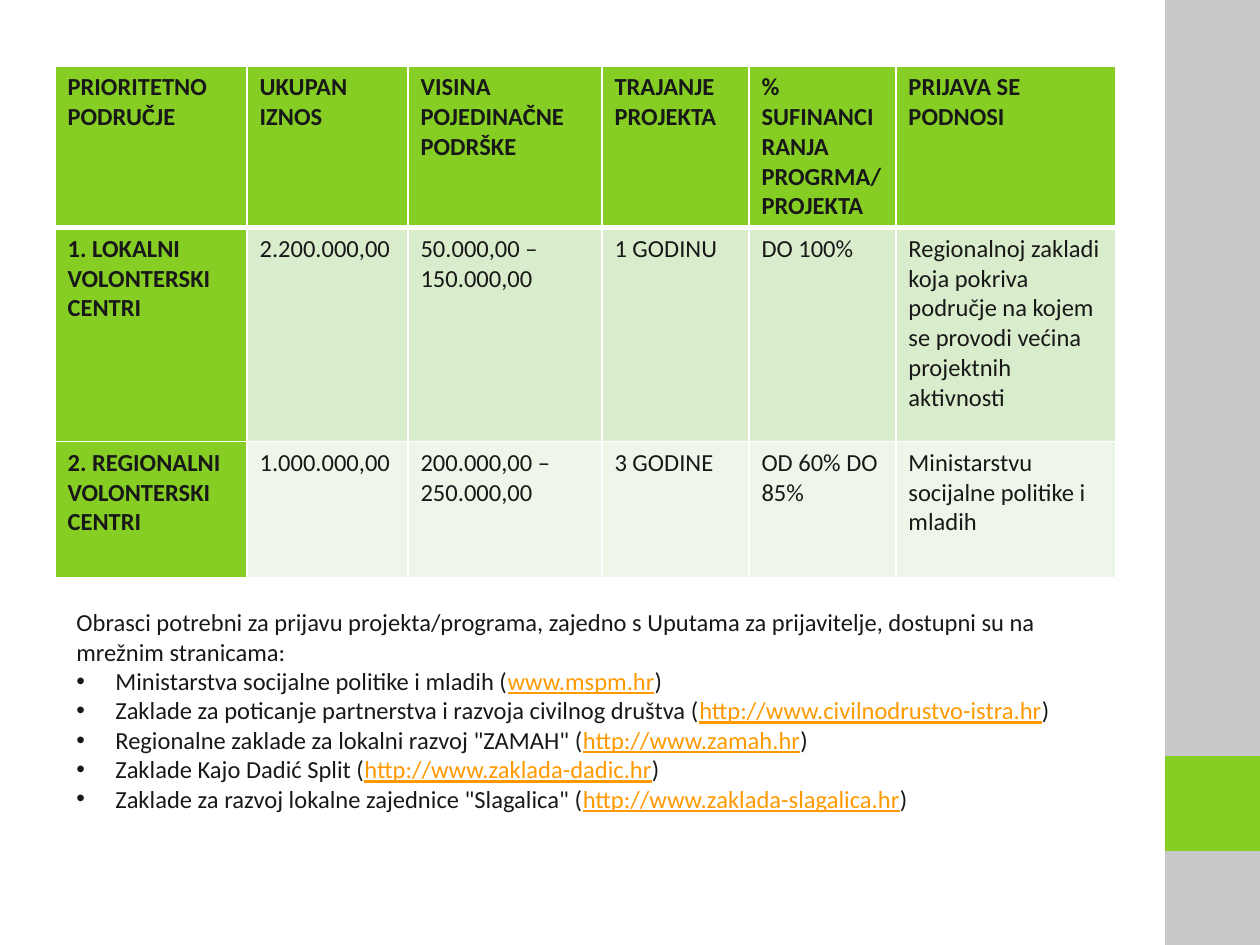
from lxml import etree
from pptx import Presentation, util as u
from pptx.dml.color import RGBColor
from pptx.enum import shapes
from pptx.oxml import ns

GREEN, GREY, WHITE, INK, LINK = "86CE24", "C9C9C9", "FFFFFF", "181818", "FF9900"
BANDS = ["D9EDCD", "EDF6E8"]
COLS = [192, 161, 194, 147, 147, 220]
ROWS = [160, 214, 136]
CELLS = [
    ["PRIORITETNO PODRUČJE", "UKUPAN\nIZNOS", "VISINA POJEDINAČNE PODRŠKE",
     "TRAJANJE PROJEKTA", "% SUFINANCIRANJA PROGRMA/PROJEKTA", "PRIJAVA SE PODNOSI"],
    ["1. LOKALNI VOLONTERSKI\nCENTRI", "2.200.000,00", "50.000,00 – 150.000,00",
     "1 GODINU", "DO 100%",
     "Regionalnoj zakladi koja pokriva područje na kojem se provodi većina projektnih aktivnosti"],
    ["2. REGIONALNI VOLONTERSKI\nCENTRI", "1.000.000,00", "200.000,00 – 250.000,00",
     "3 GODINE", "OD 60% DO 85%", "Ministarstvu socijalne politike i mladih"],
]
INTRO = ("Obrasci potrebni za prijavu projekta/programa, zajedno s Uputama za "
         "prijavitelje, dostupni su na mrežnim stranicama:")
SITES = [
    ("Ministarstva socijalne politike i mladih", "www.mspm.hr"),
    ("Zaklade za poticanje partnerstva i razvoja civilnog društva",
     "http://www.civilnodrustvo-istra.hr"),
    ('Regionalne zaklade za lokalni razvoj "ZAMAH"', "http://www.zamah.hr"),
    ("Zaklade Kajo Dadić Split", "http://www.zaklada-dadic.hr"),
    ('Zaklade za razvoj lokalne zajednice "Slagalica"', "http://www.zaklada-slagalica.hr"),
]


def px(n):
    return u.Inches(n / 126)


def paint(item, color):
    item.fill.solid()
    item.fill.fore_color.rgb = RGBColor.from_string(color)


def style(font, bold=False):
    font.name, font.size, font.bold = "Calibri", u.Pt(14), bold
    font.color.rgb = RGBColor.from_string(INK)


def rect(slide, x, y, w, h, color):
    box = slide.shapes.add_shape(shapes.MSO_SHAPE.RECTANGLE, px(x), px(y), px(w), px(h))
    box.shadow.inherit = False
    paint(box, color)
    box.line.fill.background()


def edge(cell, side, width):
    line = etree.SubElement(cell._tc.get_or_add_tcPr(), ns.qn("a:ln" + side),
                            w=str(u.Pt(width)))
    fill = etree.SubElement(line, ns.qn("a:solidFill"))
    etree.SubElement(fill, ns.qn("a:srgbClr"), val=WHITE)


def side_bar(slide, x, y, w, h):
    rect(slide, x, y, w, h, GREY)
    rect(slide, x, y + h * 4 // 5, w, w, GREEN)


def grid(slide, x, y):
    table = slide.shapes.add_table(len(ROWS), len(COLS), px(x), px(y),
                                   px(sum(COLS)), px(sum(ROWS))).table
    for col, w in zip(table.columns, COLS):
        col.width = px(w)
    for row, h in zip(table.rows, ROWS):
        row.height = px(h)
    for r, line in enumerate(CELLS):
        for c, words in enumerate(line):
            cell = table.cell(r, c)
            head = r == 0 or c == 0
            # Thick rule under the header row; edges come before the fill
            for side in "LRTB":
                thick = (r, side) in [(0, "B"), (1, "T")]
                edge(cell, side, 3 if thick else 1)
            paint(cell, GREEN if head else BANDS[r - 1])
            cell.text = words
            for para in cell.text_frame.paragraphs:
                style(para.font, head)


def bullet(para, indent):
    props = para._p.get_or_add_pPr()
    props.set("marL", str(indent))
    props.set("indent", str(-indent))
    etree.SubElement(props, ns.qn("a:buFont"), typeface="Arial")
    etree.SubElement(props, ns.qn("a:buChar"), char="•")


def notes(slide, x, y, w, h):
    frame = slide.shapes.add_textbox(px(x), px(y), px(w), px(h)).text_frame
    frame.word_wrap = True
    frame.text = INTRO
    style(frame.paragraphs[0].font)
    for name, url in SITES:
        para = frame.add_paragraph()
        bullet(para, px(39))
        style(para.font)
        para.add_run().text = name + " ("
        link = para.add_run()
        link.text = url
        link.font.underline = True
        link.font.color.rgb = RGBColor.from_string(LINK)
        para.add_run().text = ")"


def main():
    deck = Presentation()
    deck.slide_width, deck.slide_height = px(1260), px(945)
    slide = deck.slides.add_slide(deck.slide_layouts[6])
    side_bar(slide, 1165, 0, 95, 945)
    grid(slide, 55, 66)
    notes(slide, 64, 601, 1042, 251)
    deck.save("out.pptx")


if __name__ == "__main__":
    main()
